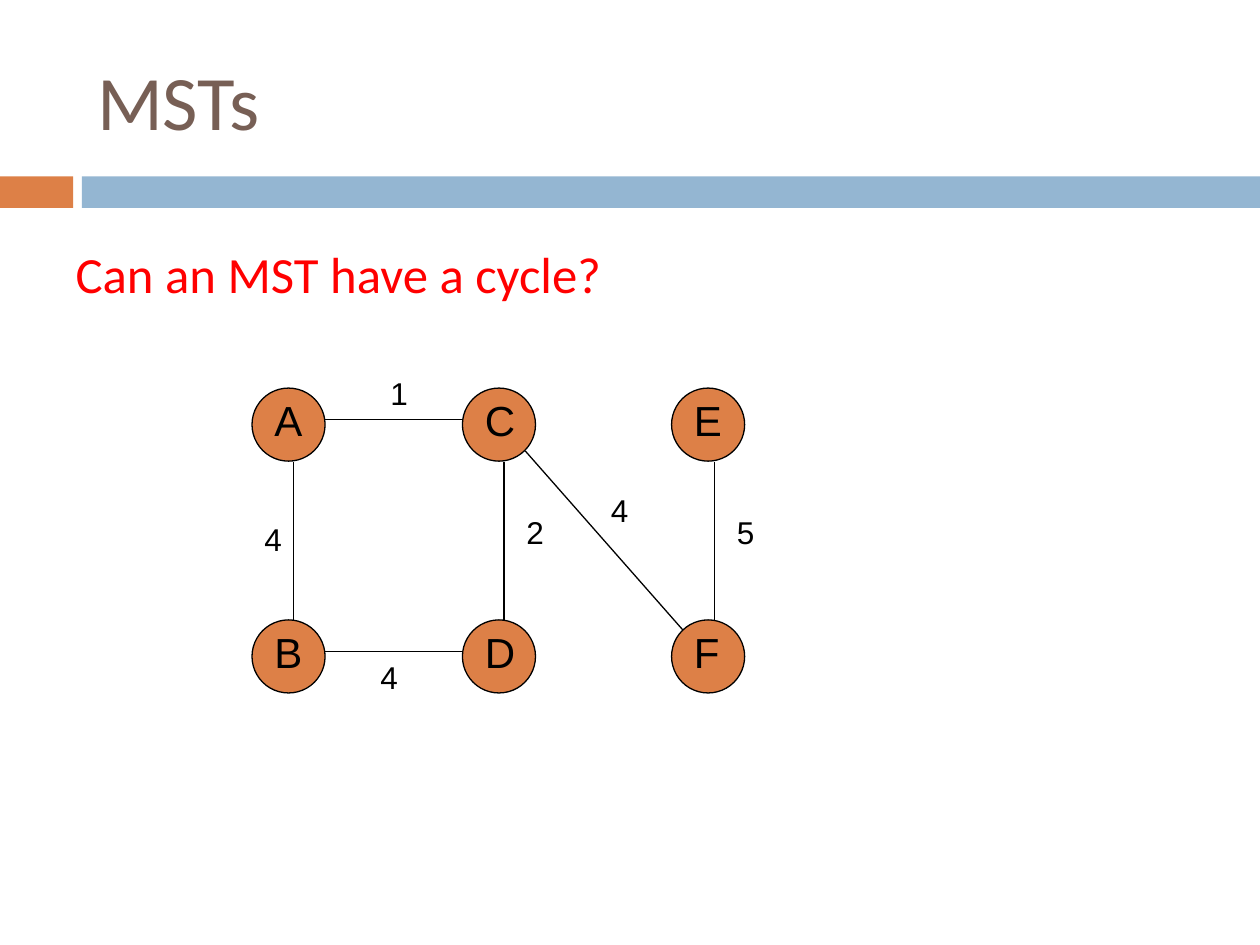
from dataclasses import dataclass

from lxml.etree import SubElement
from pptx import Presentation
from pptx.dml.color import RGBColor
from pptx.enum.shapes import MSO_CONNECTOR, MSO_SHAPE
from pptx.enum.text import MSO_ANCHOR, MSO_AUTO_SIZE, PP_ALIGN
from pptx.oxml.ns import qn
from pptx.util import Inches, Pt


@dataclass(frozen=True)
class Theme:
    orange: RGBColor = RGBColor(0xDD, 0x80, 0x47)
    blue: RGBColor = RGBColor(0x94, 0xB6, 0xD2)
    brown: RGBColor = RGBColor(0x77, 0x5F, 0x55)
    red: RGBColor = RGBColor(0xFF, 0x00, 0x00)
    black: RGBColor = RGBColor(0x00, 0x00, 0x00)
    text_font: str = "Calibri"
    graph_font: str = "Arial"
    title_size: Pt = Pt(44)
    question_size: Pt = Pt(29)
    node_size: Pt = Pt(24)
    weight_size: Pt = Pt(18)
    line_width: Pt = Pt(0.75)


theme = Theme()


def write(frame, text, font_name, size, color):
    frame.text = text
    frame.word_wrap = True
    paragraph = frame.paragraphs[0]
    paragraph.alignment = PP_ALIGN.LEFT
    paragraph.font.name = font_name
    paragraph.font.size = size
    paragraph.font.color.rgb = color
    return paragraph


def add_label(shapes, text, left, top, width, height, size):
    label = shapes.add_textbox(Inches(left), Inches(top), Inches(width), Inches(height))
    write(label.text_frame, text, theme.graph_font, size, theme.black)
    label.text_frame.auto_size = MSO_AUTO_SIZE.SHAPE_TO_FIT_TEXT


presentation = Presentation()
presentation.slide_width = Inches(10)
presentation.slide_height = Inches(7.5)
slide = presentation.slides.add_slide(presentation.slide_layouts[1])

for left, width, color in [(0, 0.58, theme.orange), (0.65, 9.35, theme.blue)]:
    band = slide.shapes.add_shape(
        MSO_SHAPE.RECTANGLE, Inches(left), Inches(1.4), Inches(width), Inches(0.25))
    band.shadow.inherit = False
    band.fill.solid()
    band.fill.fore_color.rgb = color
    band.line.fill.background()

title = slide.shapes.title
title.left, title.top = Inches(0.67), Inches(0.25)
title.width, title.height = Inches(8.92), Inches(1.08)
title.text_frame.vertical_anchor = MSO_ANCHOR.MIDDLE
write(title.text_frame, "MSTs", theme.text_font, theme.title_size, theme.brown)

question = slide.placeholders[1]
question.left, question.top = Inches(0.5), Inches(1.88)
question.width, question.height = Inches(9), Inches(0.79)
question_line = write(question.text_frame, "Can an MST have a cycle?",
                      theme.text_font, theme.question_size, theme.red)
question_line.space_before = Pt(7)
question_format = question_line._p.get_or_add_pPr()
question_format.set("marL", "0")
question_format.set("indent", "0")
SubElement(question_format, qn("a:buNone"))

columns = [2, 3.67, 5.33]
rows = [3.08, 4.92]
diameter = 0.58
for left, names in zip(columns, ["AB", "CD", "EF"]):
    for top, name in zip(rows, names):
        node = slide.shapes.add_group_shape()
        circle = node.shapes.add_shape(
            MSO_SHAPE.OVAL, Inches(left), Inches(top), Inches(diameter), Inches(diameter))
        circle.shadow.inherit = False
        circle.fill.solid()
        circle.fill.fore_color.rgb = theme.orange
        circle.line.color.rgb = theme.black
        circle.line.width = theme.line_width
        add_label(node.shapes, name, left + 0.08, top, 0.5, 0.5, theme.node_size)

edges = [
    ((2.58, 3.33), (3.67, 3.33), "1", (3, 2.92)),
    ((2.33, 4.92), (2.33, 3.67), "4", (2, 4.08)),
    ((4, 4.92), (4, 3.67), "2", (4.08, 4.02)),
    ((2.58, 5.17), (3.67, 5.17), "4", (2.92, 5.17)),
    ((4.17, 3.58), (5.42, 5), "4", (4.75, 3.85)),
    ((5.67, 4.92), (5.67, 3.67), "5", (5.75, 4.02)),
]
for start, end, weight, (left, top) in edges:
    edge = slide.shapes.add_connector(
        MSO_CONNECTOR.STRAIGHT, *[Inches(value) for value in start + end])
    edge.line.color.rgb = theme.black
    edge.line.width = theme.line_width
    SubElement(edge._element.spPr, qn("a:effectLst"))
    add_label(slide.shapes, weight, left, top, 0.58, 0.4, theme.weight_size)

presentation.save("out.pptx")
